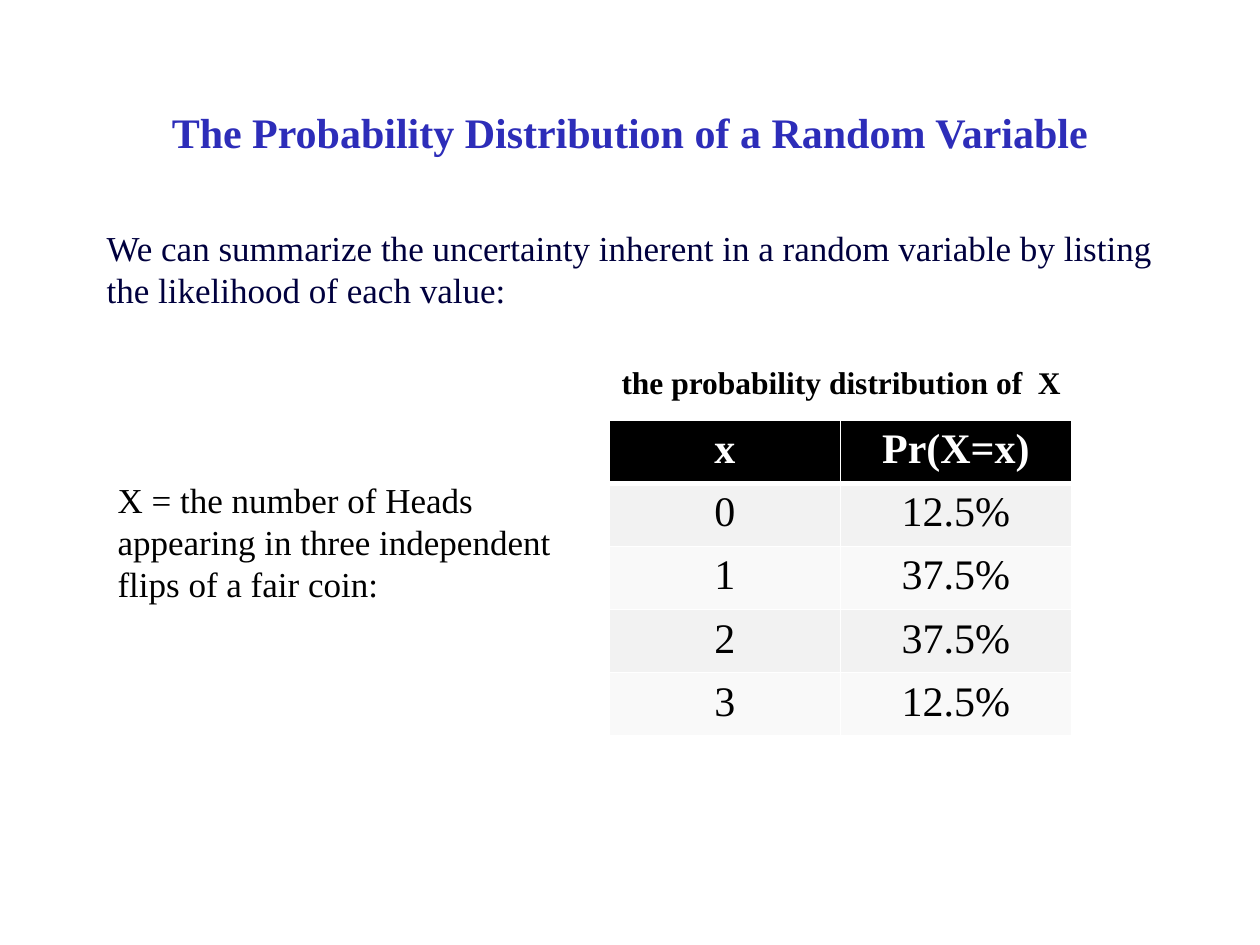
from lxml import etree
from pptx import Presentation
from pptx.dml.color import RGBColor
from pptx.enum import text
from pptx.oxml.ns import qn
from pptx.util import Cm, Pt

FONT = "Times New Roman"
DISTRIBUTION = [
    ("x", "Pr(X=x)"),
    ("0", "12.5%"),
    ("1", "37.5%"),
    ("2", "37.5%"),
    ("3", "12.5%"),
]


def color(value):
    return RGBColor.from_string(value)


def style(para, size, shade, bold=False, align=text.PP_ALIGN.LEFT):
    para.alignment = align
    para.font.name = FONT
    para.font.size = Pt(size)
    para.font.bold = bold
    para.font.color.rgb = color(shade)


def add_text(page, words, place, size, shade="000000", bold=False,
             align=text.PP_ALIGN.LEFT, anchor=text.MSO_ANCHOR.TOP):
    """Add a wrapped text box; place is left, top, width, height in cm."""
    frame = page.shapes.add_textbox(*map(Cm, place)).text_frame
    frame.word_wrap = True
    frame.vertical_anchor = anchor
    frame.text = words
    style(frame.paragraphs[0], size, shade, bold, align)


def set_borders(cell, shade, widths):
    """Draw the cell's edges; widths maps L, R, T, B to points."""
    properties = cell._tc.get_or_add_tcPr()
    for index, (side, width) in enumerate(widths.items()):
        line = etree.Element(qn(f"a:ln{side}"), w=str(Pt(width)))
        fill = etree.SubElement(line, qn("a:solidFill"))
        etree.SubElement(fill, qn("a:srgbClr"), val=shade)
        properties.insert(index, line)


def add_distribution_table(page, rows, left, top, column_width, row_height):
    count, columns = len(rows), len(rows[0])
    table = page.shapes.add_table(
        count, columns, Cm(left), Cm(top),
        Cm(column_width * columns), Cm(row_height * count)).table
    for column in table.columns:
        column.width = Cm(column_width)
    for r, values in enumerate(rows):
        table.rows[r].height = Cm(row_height)
        header = r == 0
        band = "000000" if header else ("F9F9F9", "F2F2F2")[r % 2]
        widths = {"L": 1, "R": 1, "T": 3 if r == 1 else 1, "B": 3 if header else 1}
        for c, value in enumerate(values):
            cell = table.cell(r, c)
            cell.text = value
            cell.fill.solid()
            cell.fill.fore_color.rgb = color(band)
            set_borders(cell, "FFFFFF", widths)
            style(cell.text_frame.paragraphs[0], 24,
                  "FFFFFF" if header else "000000", header, text.PP_ALIGN.CENTER)


def main():
    deck = Presentation()
    deck.slide_width, deck.slide_height = Cm(25.4), Cm(19.05)
    page = deck.slides.add_slide(deck.slide_layouts[6])
    add_text(page, "The Probability Distribution of a Random Variable",
             (1.9, 1.7, 21.6, 1.9), 24, "2D2DB9", bold=True,
             align=text.PP_ALIGN.CENTER, anchor=text.MSO_ANCHOR.MIDDLE)
    add_text(page, "We can summarize the uncertainty inherent in a random variable "
             "by listing the likelihood of each value:",
             (1.9, 4.45, 21.6, 2.75), 20, "00003E")
    add_distribution_table(page, DISTRIBUTION, 12.28, 8.47, 4.66, 1.19)
    add_text(page, "X = the number of Heads appearing in three independent "
             "flips of a fair coin:", (2.12, 9.53, 9.31, 2.82), 20)
    add_text(page, "the probability distribution of  X",
             (12.28, 7.2, 9.53, 1.02), 18, bold=True)
    deck.save("out.pptx")


if __name__ == "__main__":
    main()
